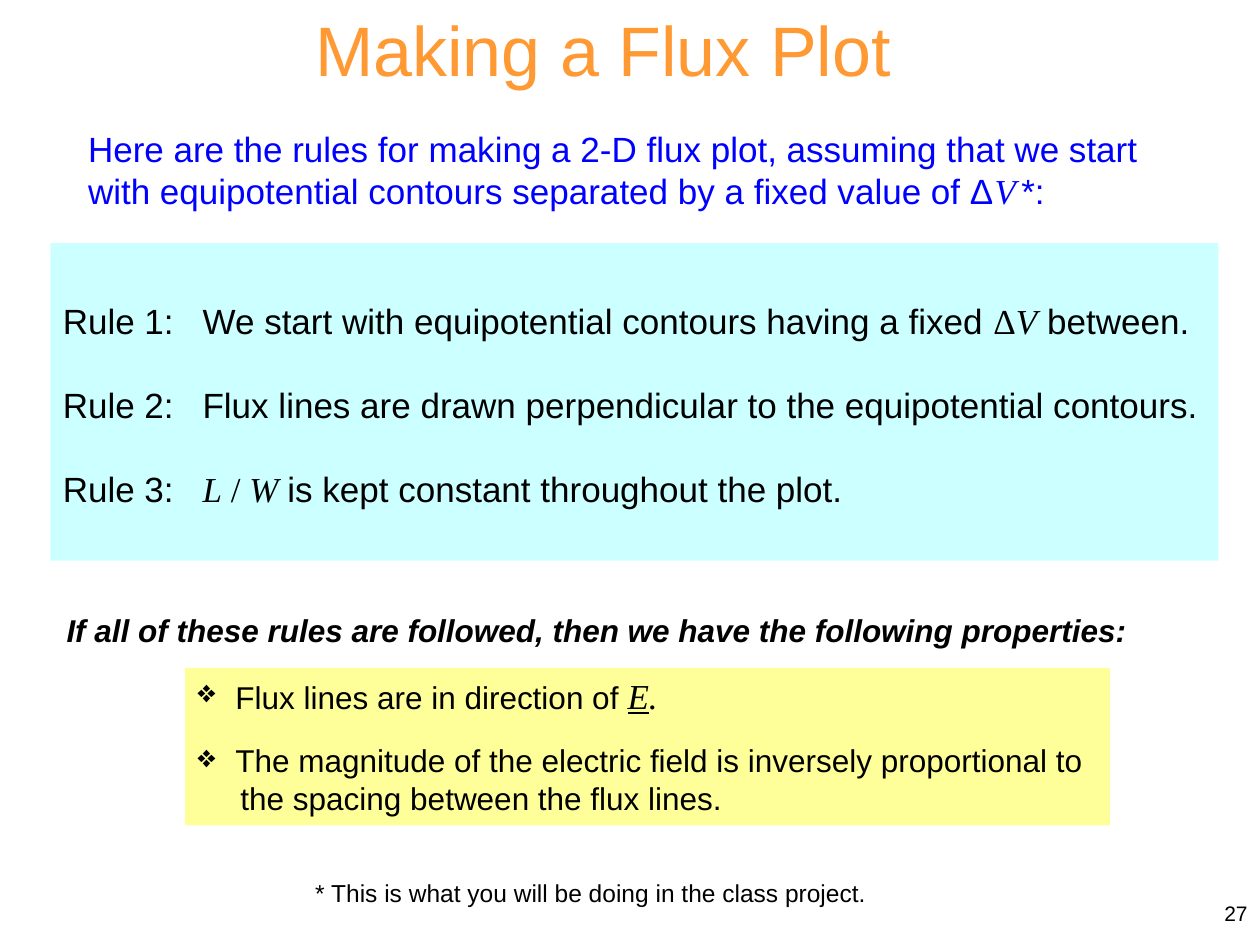
from lxml.etree import SubElement
from pptx import Presentation
from pptx.dml.color import RGBColor
from pptx.enum.shapes import MSO_SHAPE
from pptx.enum.text import MSO_ANCHOR, PP_ALIGN
from pptx.oxml.ns import qn
from pptx.util import Inches, Pt

ORANGE = RGBColor(0xFF, 0x99, 0x33)
BLUE = RGBColor(0x00, 0x00, 0xFF)
BLACK = RGBColor(0x00, 0x00, 0x00)
CYAN = RGBColor(0xCC, 0xFF, 0xFF)
YELLOW = RGBColor(0xFF, 0xFF, 0x99)

SERIF = {"name": "Times New Roman"}
SYMBOL = {**SERIF, "italic": True}
VECTOR = {**SYMBOL, "size": Pt(20), "underline": True}
FULL_STOP = {**SYMBOL, "size": Pt(20)}


class SlideWriter:
    def __init__(self, page, font_name="Arial"):
        self.page = page
        self.font_name = font_name

    def text(self, place, paragraphs, size, color=BLACK, wrap=True, **frame_format):
        box = self.page.shapes.add_textbox(*map(Inches, place))
        self.fill_frame(box, paragraphs, size, color, wrap, frame_format)

    def panel(self, place, paragraphs, size, fill, **frame_format):
        box = self.page.shapes.add_shape(MSO_SHAPE.RECTANGLE, *map(Inches, place))
        box.shadow.inherit = False
        box.fill.solid()
        box.fill.fore_color.rgb = fill
        box.line.fill.background()
        self.fill_frame(box, paragraphs, size, BLACK, True, frame_format)

    def fill_frame(self, box, paragraphs, size, color, wrap, frame_format):
        frame = box.text_frame
        frame_format = {"word_wrap": wrap, "vertical_anchor": MSO_ANCHOR.TOP, **frame_format}
        for key, value in frame_format.items():
            setattr(frame, key, value)
        for index, (spans, para_format) in enumerate(paragraphs):
            para = frame.paragraphs[0] if index == 0 else frame.add_paragraph()
            self.fill_paragraph(para, spans, size, color, dict(para_format))

    def fill_paragraph(self, para, spans, size, color, para_format):
        properties = para._p.get_or_add_pPr()
        margin = para_format.pop("margin", 0)
        hanging = para_format.pop("hanging", 0)
        bullet = para_format.pop("bullet", None)
        properties.set("marL", str(Inches(margin)))
        properties.set("indent", str(-Inches(hanging)))
        if bullet:
            SubElement(properties, qn("a:buChar")).set("char", bullet)
        largest = max(style.get("size", Pt(size)) for _, style in spans)
        para_format = {"alignment": PP_ALIGN.LEFT, "line_spacing": Pt(largest.pt * 1.2), **para_format}
        for key, value in para_format.items():
            setattr(para, key, value)
        for wording, style in spans:
            span = para.add_run()
            span.text = wording
            span.font.color.rgb = color
            for key, value in {"name": self.font_name, "size": Pt(size), **style}.items():
                setattr(span.font, key, value)


def main():
    deck = Presentation()
    deck.slide_width, deck.slide_height = Inches(10), Inches(7.5)
    page = deck.slides.add_slide(deck.slide_layouts[6])
    writer = SlideWriter(page)
    centered = {"alignment": PP_ALIGN.CENTER}

    writer.text((1.17, 0, 7.23, 0.77), [([("Making a Flux Plot", {})], centered)], 40, ORANGE)
    writer.text(
        (7.92, 7, 2.08, 0.5), [([("27", {})], {"alignment": PP_ALIGN.RIGHT})], 12,
        vertical_anchor=MSO_ANCHOR.MIDDLE,
    )

    rules = [
        [("We start with equipotential contours having a fixed ", {}), ("Δ", SERIF),
         ("V", SYMBOL), (" between.", {})],
        [("Flux lines are drawn perpendicular to the equipotential contours.", {})],
        [("L", SYMBOL), (" / ", SERIF), ("W ", SYMBOL),
         ("is kept constant throughout the plot.", {})],
    ]
    rule_format = {"margin": 1.11, "hanging": 1.11, "space_after": Pt(24)}
    rule_paragraphs = [
        ([(f"Rule {number}:\t", {}), *spans], rule_format)
        for number, spans in enumerate(rules, 1)
    ]
    writer.panel((0.4, 1.93, 9.27, 2.52), rule_paragraphs, 20, CYAN, margin_top=Inches(0.45))

    emphasis = {"bold": True, "italic": True}
    writer.text(
        (0.43, 4.8, 8.7, 0.4),
        [([("If all of these rules are followed, then we have the following properties:", emphasis)], {})],
        18, wrap=False,
    )

    bulleted = {"margin": 0.3, "hanging": 0.3, "bullet": "❖"}
    properties = [
        ([("Flux lines are in direction of ", {}), ("E", VECTOR), (".", FULL_STOP)], bulleted),
        ([("The magnitude of the electric field is inversely proportional to", {})],
         {**bulleted, "space_before": Pt(14.4)}),
        ([("the spacing between the flux lines.", {})], {"margin": 0.34}),
    ]
    writer.panel((1.47, 5.3, 7.34, 1.25), properties, 18, YELLOW)

    introduction = [
        ("Here are the rules for making a 2-D flux plot, assuming that we start "
         "with equipotential contours separated by a fixed value of Δ", {}),
        ("V", SYMBOL), (" ", {**SYMBOL, "size": Pt(12)}), ("*:", {}),
    ]
    writer.text((0.6, 0.96, 8.68, 0.77), [(introduction, {})], 20, BLUE)
    writer.text(
        (2.36, 6.92, 4.66, 0.34),
        [([("* This is what you will be doing in the class project.", {})], centered)],
        14, wrap=False,
    )
    deck.save("out.pptx")


if __name__ == "__main__":
    main()
